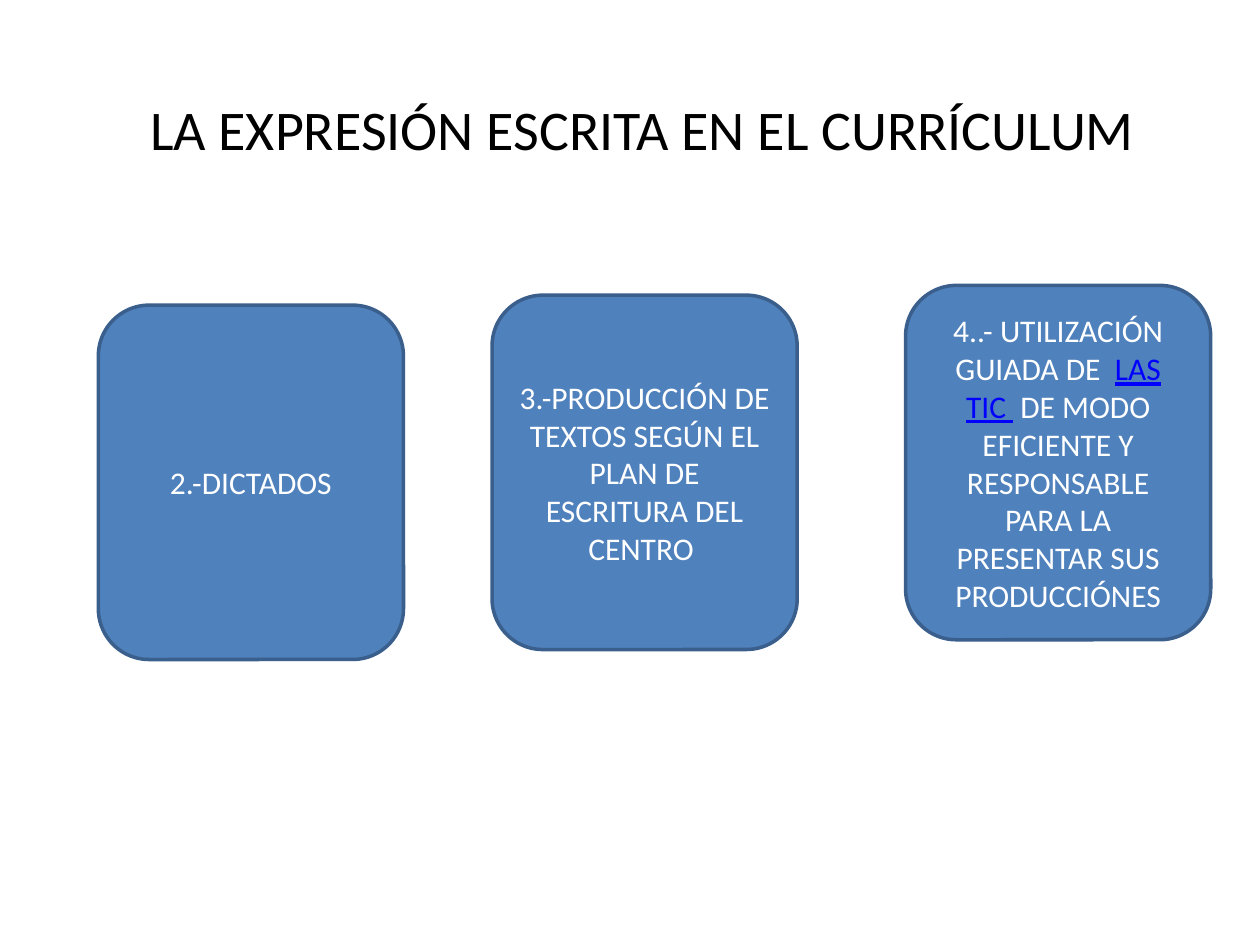
from pptx import Presentation
from pptx.dml.color import RGBColor
from pptx.enum.shapes import MSO_SHAPE as Preset
from pptx.enum.text import MSO_ANCHOR as Anchor, MSO_AUTO_SIZE as AutoSize, PP_ALIGN as Align
from pptx.util import Pt

FONT = "Calibri"
WHITE, BLACK, LINK = "FFFFFF", "000000", "0000FF"
CARD_FILL, CARD_LINE = "4F81BD", "3A5F8C"
CARD_WIDTH, CARD_HEIGHT = 174.4, 202.5

CARDS = [
    (56.2, 174.4, [("2.-DICTADOS", {})]),
    (281.2, 168.7, [("3.-PRODUCCIÓN DE TEXTOS SEGÚN EL PLAN DE ESCRITURA DEL CENTRO ", {})]),
    (517.5, 163.1, [
        ("4..- UTILIZACIÓN GUIADA DE  ", {}),
        ("LAS TIC ", {"color": LINK, "underline": True}),
        (" DE MODO EFICIENTE Y RESPONSABLE PARA LA PRESENTAR SUS PRODUCCIÓNES", {}),
    ]),
]


def rgb(value):
    return RGBColor.from_string(value)


def add_span(para, text, size=18, color=WHITE, underline=None):
    span = para.add_run()
    span.text = text
    span.font.name = FONT
    span.font.size = Pt(size)
    span.font.color.rgb = rgb(color)
    span.font.underline = underline


def add_card(page, left, top, spans):
    card = page.shapes.add_shape(
        Preset.ROUNDED_RECTANGLE, Pt(left), Pt(top), Pt(CARD_WIDTH), Pt(CARD_HEIGHT))
    card.shadow.inherit = False
    card.fill.solid()
    card.fill.fore_color.rgb = rgb(CARD_FILL)
    card.line.color.rgb = rgb(CARD_LINE)
    card.line.width = Pt(2)
    frame = card.text_frame
    frame.word_wrap = True
    frame.vertical_anchor = Anchor.MIDDLE
    para = frame.paragraphs[0]
    para.alignment = Align.CENTER
    for text, style in spans:
        add_span(para, text, **style)


def add_title(page, text):
    box = page.shapes.add_textbox(Pt(78.7), Pt(50.6), Pt(579.4), Pt(46))
    frame = box.text_frame
    frame.word_wrap = True
    frame.auto_size = AutoSize.SHAPE_TO_FIT_TEXT
    add_span(frame.paragraphs[0], text, size=32, color=BLACK)


def main():
    deck = Presentation()
    deck.slide_width, deck.slide_height = Pt(720), Pt(540)
    page = deck.slides.add_slide(deck.slide_layouts[6])
    for left, top, spans in CARDS:
        add_card(page, left, top, spans)
    add_title(page, "LA EXPRESIÓN ESCRITA EN EL CURRÍCULUM")
    deck.save("out.pptx")


if __name__ == "__main__":
    main()
